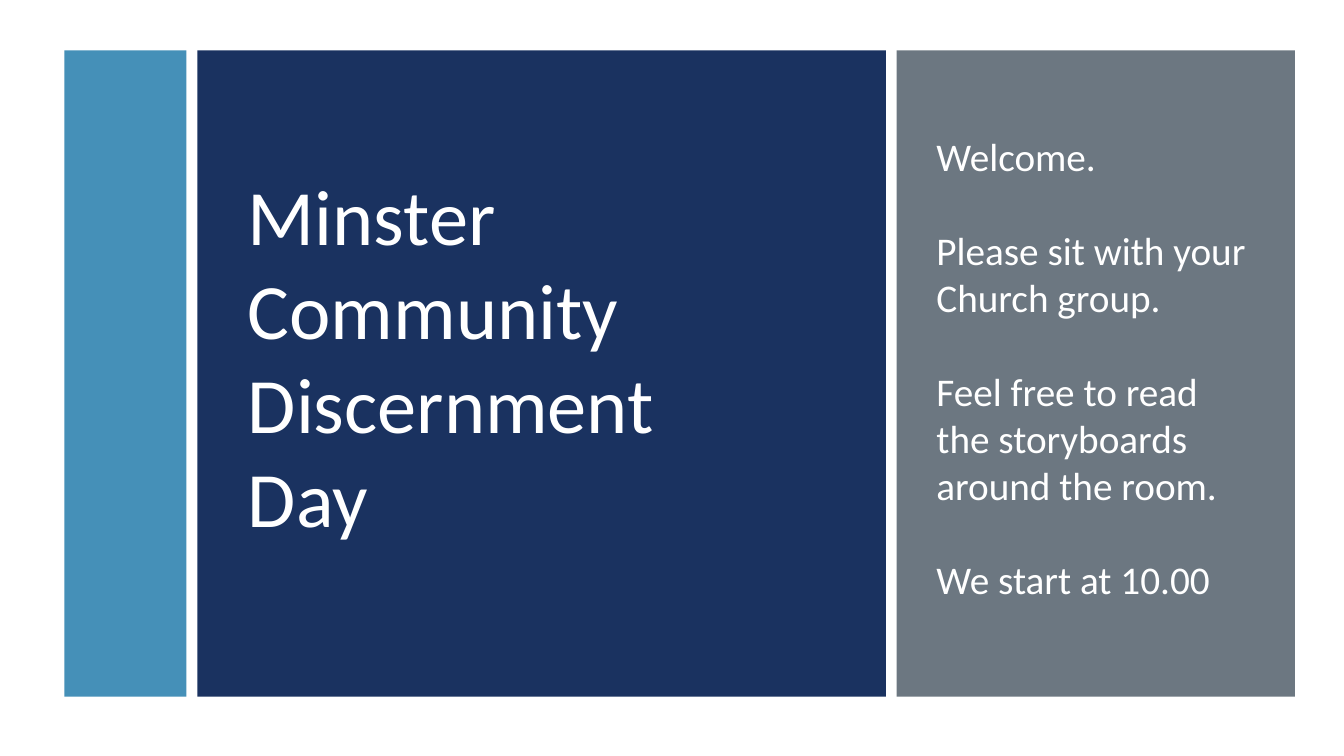
from pptx import Presentation
from pptx.dml.color import RGBColor
from pptx.enum.shapes import MSO_SHAPE
from pptx.enum.text import MSO_ANCHOR, MSO_AUTO_SIZE
from pptx.util import Inches, Pt

RECTANGLE = MSO_SHAPE.RECTANGLE
TOP, MIDDLE = MSO_ANCHOR.TOP, MSO_ANCHOR.MIDDLE
NO_FIT, GROW = MSO_AUTO_SIZE.NONE, MSO_AUTO_SIZE.SHAPE_TO_FIT_TEXT

WHITE, BLUE, NAVY, GRAY = "FFFFFF", "4590B8", "1A3260", "6C7781"


def color(hex_text):
    return RGBColor.from_string(hex_text)


def write_text(text_frame, paragraphs, *, size, font, fill, gap=0):
    """Write one paragraph per item, with a gap in points between them."""
    for index, text in enumerate(paragraphs):
        paragraph = text_frame.paragraphs[0] if index == 0 else text_frame.add_paragraph()
        paragraph.text = text
        if index:
            paragraph.space_before = Pt(gap)
        for run in paragraph.runs:
            run.font.size = Pt(size)
            run.font.name = font
            run.font.color.rgb = color(fill)


class SlideBuilder:
    """Holds the style and the slide; lengths are percent of the slide's size."""

    font = "Calibri"
    text_color = WHITE

    def __init__(self, presentation):
        self.width = presentation.slide_width
        self.height = presentation.slide_height
        self.slide = presentation.slides.add_slide(presentation.slide_layouts[6])

    def box(self, left, top, width, height):
        return (int(self.width * left / 100), int(self.height * top / 100),
                int(self.width * width / 100), int(self.height * height / 100))

    def panel(self, left, top, width, height, fill):
        shape = self.slide.shapes.add_shape(RECTANGLE, *self.box(left, top, width, height))
        shape.shadow.inherit = False
        shape.fill.solid()
        shape.fill.fore_color.rgb = color(fill)
        shape.line.fill.background()

    def text(self, left, top, width, height, paragraphs, size, anchor=TOP, fit=NO_FIT, gap=0):
        shape = self.slide.shapes.add_textbox(*self.box(left, top, width, height))
        text_frame = shape.text_frame
        text_frame.word_wrap = True
        text_frame.auto_size = fit
        text_frame.vertical_anchor = anchor
        write_text(text_frame, paragraphs, size=size, font=self.font,
                   fill=self.text_color, gap=gap)


def main():
    presentation = Presentation()
    presentation.slide_width = Inches(13.33)
    presentation.slide_height = Inches(7.5)
    builder = SlideBuilder(presentation)

    # Background
    builder.panel(0, 0, 100, 100, WHITE)

    # Three panels side by side with equal gaps
    left, panel_gap = 4.8, 0.8
    for width, fill in ((9.08, BLUE), (51.24, NAVY), (29.63, GRAY)):
        builder.panel(left, 6.67, width, 85.47, fill)
        left += width + panel_gap

    # Title
    builder.text(17.7, 12.4, 45.3, 69.2, ["Minster Community Discernment \vDay"],
                 size=56, anchor=MIDDLE)

    # Welcome message, one empty line's height between paragraphs
    welcome = [
        "Welcome.",
        "Please sit with your Church group.",
        "Feel free to read the storyboards around the room.",
        "We start at 10.00",
    ]
    builder.text(68.94, 16.8, 25.36, 64.13, welcome, size=28, fit=GROW, gap=33.6)

    presentation.save("out.pptx")


if __name__ == "__main__":
    main()
